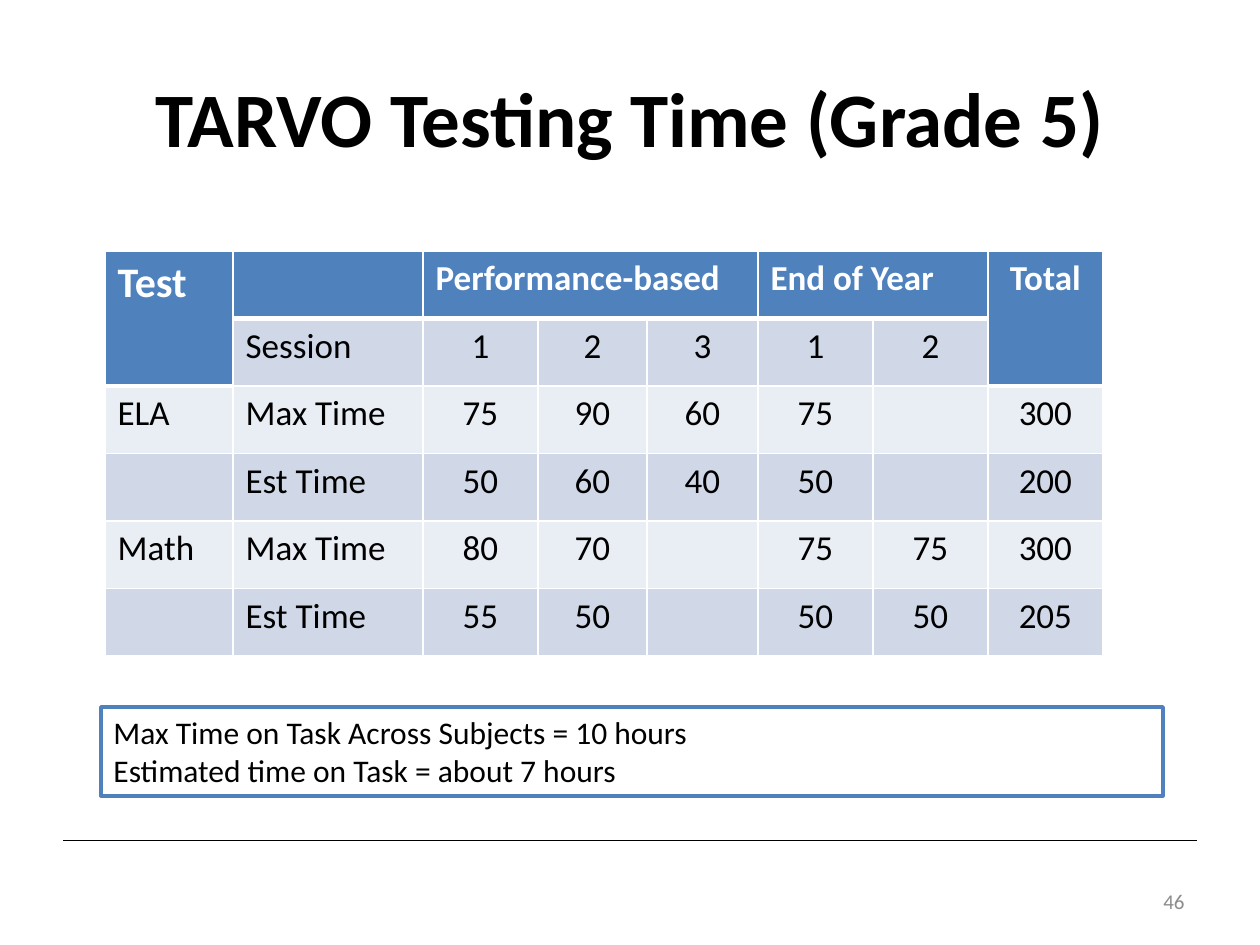
from lxml.etree import SubElement
from pptx import Presentation
from pptx.dml.color import RGBColor
from pptx.enum.shapes import MSO_CONNECTOR, MSO_SHAPE
from pptx.enum.text import MSO_ANCHOR, PP_ALIGN
from pptx.oxml import parse_xml
from pptx.oxml.ns import nsdecls, qn
from pptx.util import Emu, Pt

HUES = {"black": "000000", "white": "FFFFFF", "blue": "4F81BD",
        "dark": "D0D8E8", "light": "E9EDF4", "gray": "8C8C8C"}
COLOR = {name: RGBColor.from_string(hue) for name, hue in HUES.items()}
SCALE = 914400 / 126


def px(*sizes):
    return [Emu(round(size * SCALE)) for size in sizes]


def style(para, size, color, bold=False, align=PP_ALIGN.LEFT):
    para.alignment = align
    font = para.font
    font.name, font.size, font.bold = "Calibri", Pt(size), bold
    font.color.rgb = COLOR[color]


deck = Presentation()
deck.slide_width, deck.slide_height = px(1260, 945)
slide = deck.slides.add_slide(deck.slide_layouts[6])
shapes = slide.shapes

# Footer rule
rule = shapes.add_connector(MSO_CONNECTOR.STRAIGHT, *px(63, 840, 1197, 840))
rule.line.color.rgb = COLOR["black"]
rule.line.width = Pt(0.5)
SubElement(rule._element.spPr, qn("a:effectLst"))

# Title and page number
for text, area, size, color, bold, align in [
    ("TARVO Testing Time (Grade 5)", (63, 38, 1134, 157), 44, "black", True, PP_ALIGN.CENTER),
    ("46", (903, 876, 294, 50), 12, "gray", False, PP_ALIGN.RIGHT),
]:
    frame = shapes.add_textbox(*px(*area)).text_frame
    frame.word_wrap = True
    frame.vertical_anchor = MSO_ANCHOR.MIDDLE
    frame.text = text
    style(frame.paragraphs[0], size, color, bold, align)

# Table of testing times
rows = [
    ["Test", "", "Performance-based", "", "", "End of Year", "", "Total"],
    ["", "Session", "1", "2", "3", "1", "2", ""],
    ["ELA", "Max Time", "75", "90", "60", "75", "", "300"],
    ["", "Est Time", "50", "60", "40", "50", "", "200"],
    ["Math", "Max Time", "80", "70", "", "75", "75", "300"],
    ["", "Est Time", "55", "50", "", "50", "50", "205"],
]
widths = px(128, 190, 115, 109, 111, 115, 115, 115)
table = shapes.add_table(len(rows), len(widths), *px(105, 251, 998, 405)).table
for col, width in zip(table.columns, widths):
    col.width = width
for top, left, low, right in [(0, 0, 1, 0), (0, 2, 0, 4), (0, 5, 0, 6), (0, 7, 1, 7)]:
    table.cell(top, left).merge(table.cell(low, right))

for r, row in enumerate(rows):
    for c, text in enumerate(row):
        cell = table.cell(r, c)
        edge = c in (0, 7)
        head = r == 0 or (r == 1 and edge)
        cell.fill.solid()
        cell.fill.fore_color.rgb = COLOR["blue" if head else "dark" if r % 2 else "light"]

        # White borders, thick under the header
        last = 1 if edge else 0
        thick = {"T": r == last + 1, "B": r == last or (head and r == 0)}
        for i, side in enumerate("LRTB"):
            width = Pt(3 if thick.get(side) else 1)
            cell._tc.get_or_add_tcPr().insert(i, parse_xml(
                f'<a:ln{side} {nsdecls("a")} w="{width}"><a:solidFill>'
                f'<a:srgbClr val="{HUES["white"]}"/></a:solidFill></a:ln{side}>'))

        if text:
            cell.text = text
            middle = c == 7 or (r > 0 and c > 1)
            style(cell.text_frame.paragraphs[0], 24 if text == "Test" else 20,
                  "white" if head else "black", head,
                  PP_ALIGN.CENTER if middle else PP_ALIGN.LEFT)

# Summary box
box = shapes.add_shape(MSO_SHAPE.RECTANGLE, *px(101, 707, 1062, 89))
box.shadow.inherit = False
box.fill.solid()
box.fill.fore_color.rgb = COLOR["white"]
box.line.color.rgb = COLOR["blue"]
box.line.width = Pt(2)
frame = box.text_frame
frame.word_wrap = True
frame.vertical_anchor = MSO_ANCHOR.TOP
frame.text = "Max Time on Task Across Subjects = 10 hours\nEstimated time on Task = about 7 hours"
for para in frame.paragraphs:
    style(para, 18, "black")

deck.save("out.pptx")
